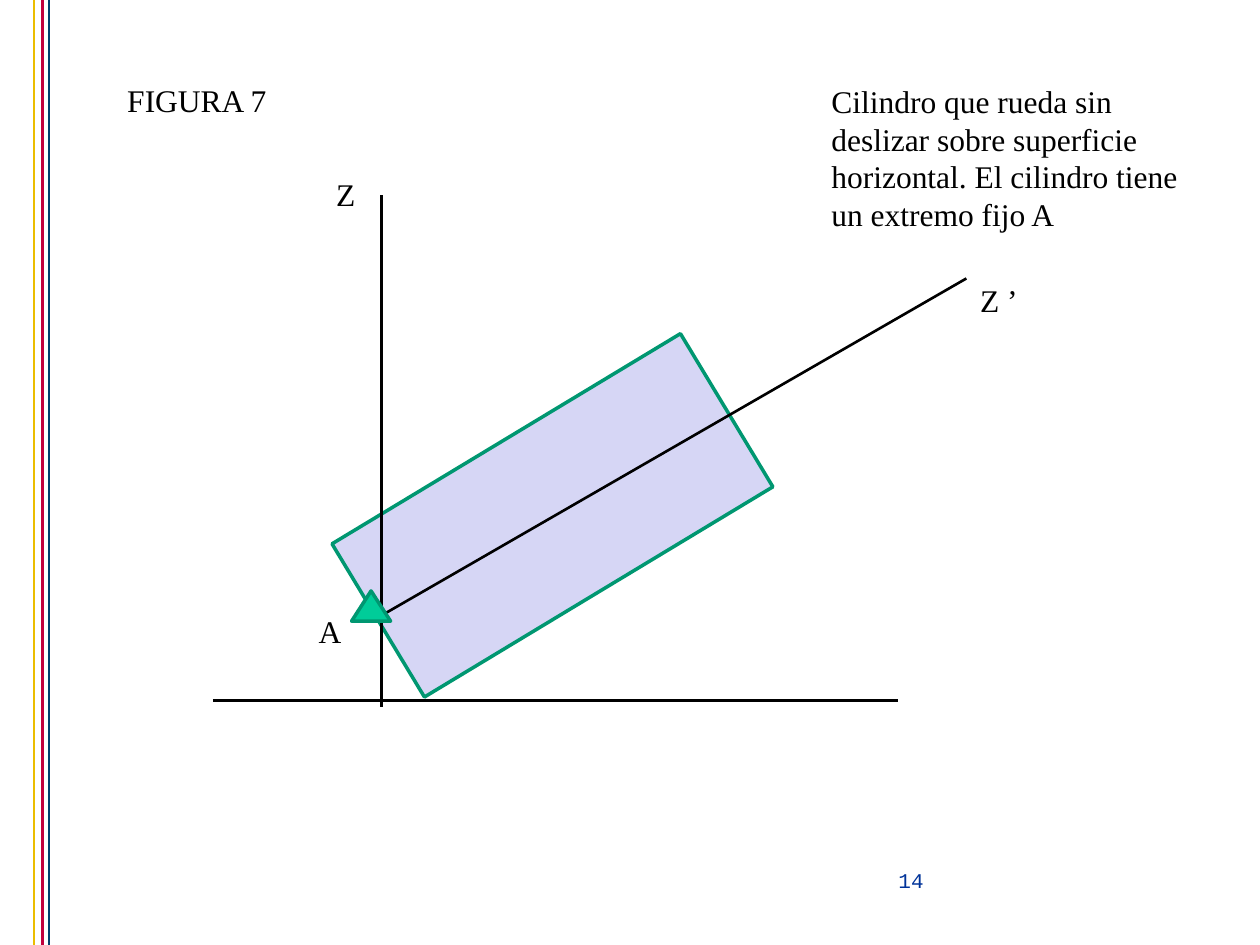
from dataclasses import dataclass

import pptx
import pptx.dml.color
import pptx.enum.shapes
import pptx.enum.text
import pptx.oxml.ns
import pptx.util
from lxml import etree

# The slide is a grid of square cells
COLUMNS, ROWS = 100, 75
CELL = pptx.util.Inches(0.1)
BLACK, GREEN = "000000", "009771"
SHAPES = pptx.enum.shapes.MSO_SHAPE
ALIGN = pptx.enum.text.PP_ALIGN


@dataclass
class Box:
    column: float
    row: float
    columns: float
    rows: float


@dataclass
class Label:
    text: str
    box: Box
    font: str = "Times New Roman"
    size: float = 18
    color: str = BLACK
    align: ALIGN = ALIGN.LEFT


@dataclass
class Line:
    start: tuple[float, float]
    end: tuple[float, float]
    color: str = BLACK
    width: float = 1.5


@dataclass
class Solid:
    kind: SHAPES
    box: Box
    fill: str
    rotation: float = 0


def cells(count: float) -> int:
    return round(count * CELL)


def rgb(color: str) -> pptx.dml.color.RGBColor:
    return pptx.dml.color.RGBColor.from_string(color)


def place(shape, box: Box) -> None:
    shape.left, shape.top = cells(box.column), cells(box.row)
    shape.width, shape.height = cells(box.columns), cells(box.rows)


def write_label(shape, label: Label) -> None:
    place(shape, label.box)
    frame = shape.text_frame
    frame.word_wrap = True
    frame.auto_size = pptx.enum.text.MSO_AUTO_SIZE.NONE
    frame.vertical_anchor = pptx.enum.text.MSO_ANCHOR.TOP
    paragraph = frame.paragraphs[0]
    paragraph.alignment = label.align
    run = paragraph.add_run()
    run.text = label.text
    run.font.name = label.font
    run.font.size = pptx.util.Pt(label.size)
    run.font.color.rgb = rgb(label.color)


def add_label(slide, label: Label) -> None:
    write_label(slide.shapes.add_textbox(0, 0, CELL, CELL), label)


def add_line(slide, line: Line) -> None:
    ends = [cells(value) for value in (*line.start, *line.end)]
    connector = slide.shapes.add_connector(
        pptx.enum.shapes.MSO_CONNECTOR.STRAIGHT, *ends)
    connector.line.color.rgb = rgb(line.color)
    connector.line.width = pptx.util.Pt(line.width)
    etree.SubElement(connector._element.spPr, pptx.oxml.ns.qn("a:effectLst"))


def add_solid(slide, solid: Solid) -> None:
    shape = slide.shapes.add_shape(solid.kind, 0, 0, CELL, CELL)
    place(shape, solid.box)
    shape.rotation = solid.rotation
    shape.shadow.inherit = False
    shape.fill.solid()
    shape.fill.fore_color.rgb = rgb(solid.fill)
    shape.line.color.rgb = rgb(GREEN)
    shape.line.width = pptx.util.Pt(2)


def main() -> None:
    deck = pptx.Presentation()
    deck.slide_width, deck.slide_height = cells(COLUMNS), cells(ROWS)
    slide = deck.slides.add_slide(deck.slide_layouts.get_by_name("Title Only"))

    # Title
    write_label(slide.shapes.title, Label("FIGURA 7", Box(9.1, 5.9, 18.9, 4)))

    # Page number and stripes along the left edge
    add_label(slide, Label("14", Box(69.4, 68.4, 5.8, 2.7),
                           "Courier New", 12, "003399", ALIGN.CENTER))
    for column, color in ((2.7, "EBBD00"), (3.4, "C1003D"), (3.9, "003F6D")):
        add_line(slide, Line((column, 0), (column, ROWS), color))

    # Cylinder, its axis Z ’, the vertical Z and the floor
    add_solid(slide, Solid(SHAPES.RECTANGLE, Box(27.7, 33.8, 32.3, 14.2),
                           "D6D6F5", 328.9))
    for line in (Line((76.7, 22.1), (29.5, 49.3)),
                 Line((30.3, 15.5), (30.3, 56.1)),
                 Line((16.9, 55.6), (71.3, 55.6))):
        add_line(slide, line)

    # Fixed end A
    add_solid(slide, Solid(SHAPES.ISOSCELES_TRIANGLE,
                           Box(27.9, 46.9, 3.1, 2.4), "00CC99"))

    # Letters and description
    for letter, column, row in (("Z", 25.7, 13.4), ("Z ’", 76.8, 21.8),
                                ("A", 24.3, 48.1)):
        add_label(slide, Label(letter, Box(column, row, 10.2, 4)))
    add_label(slide, Label(
        "Cilindro que rueda sin deslizar sobre superficie horizontal. "
        "El cilindro tiene un extremo fijo A", Box(65, 6, 29.9, 13.1)))

    deck.save("out.pptx")


if __name__ == "__main__":
    main()
